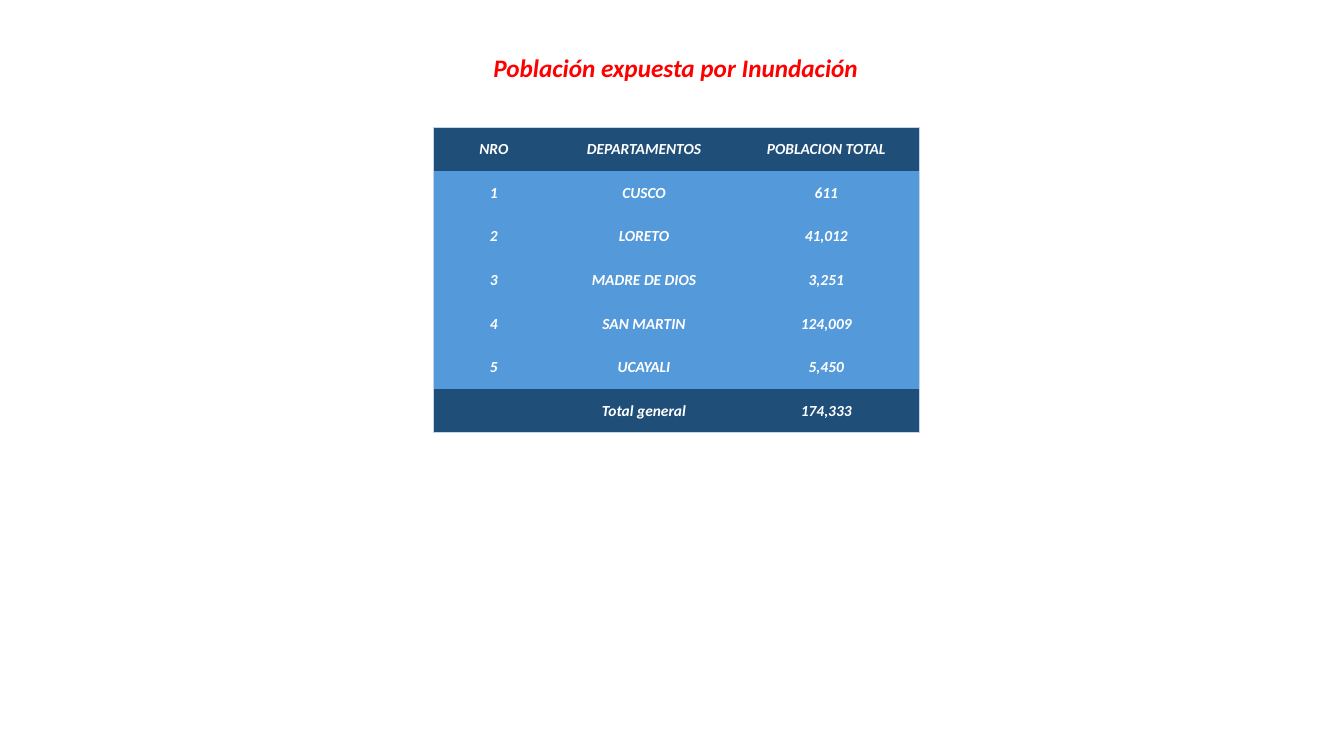
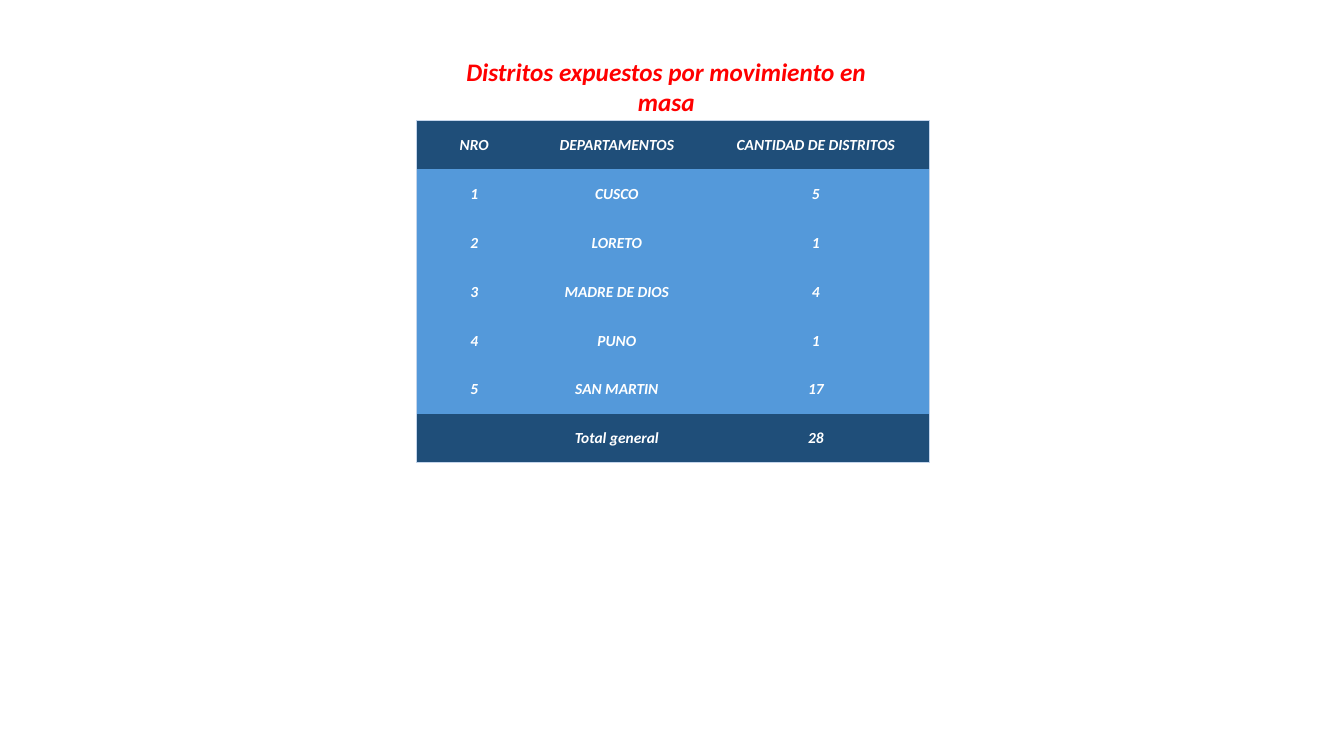
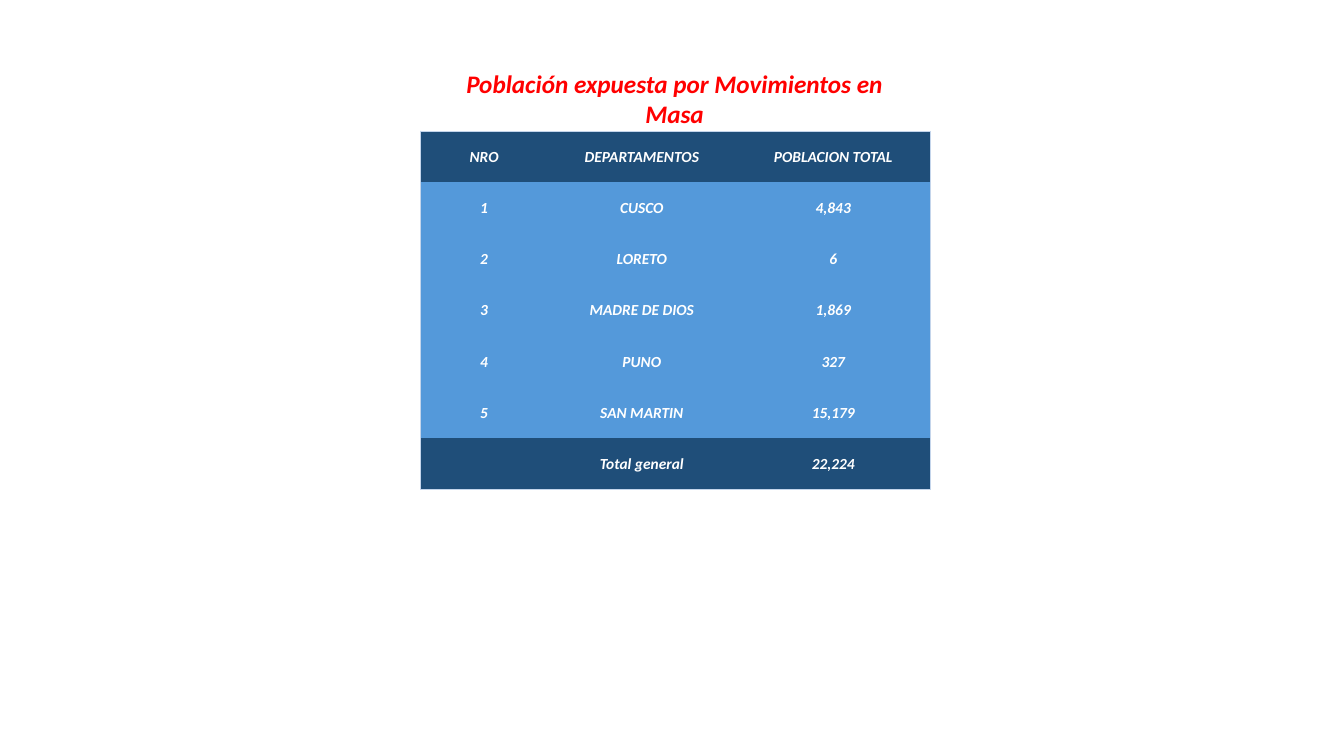
from pptx import Presentation
from pptx.dml.color import RGBColor
from pptx.enum.text import MSO_ANCHOR, MSO_AUTO_SIZE, PP_ALIGN
from pptx.oxml.ns import qn
from pptx.util import Cm, Pt
from lxml import etree

CENTER = PP_ALIGN.CENTER
MIDDLE = MSO_ANCHOR.MIDDLE
FIT_SHAPE = MSO_AUTO_SIZE.SHAPE_TO_FIT_TEXT

COLORS = {
    "title": "FF0000",
    "band": "1F4E79",
    "body": "5499DA",
    "text": "FFFFFF",
    "border": "C4D5EB",
}
FONT = "Calibri"
TITLE_SIZE = 18
CELL_SIZE = 11
TITLE_HEIGHT = 1.02
BORDER_WIDTH = 0.5
CELL_INSET = 0.02

SLIDES = [
    {
        "title": "Población expuesta por Inundación",
        "title_box": (12.14, 1.19, 9.78),
        "table_at": (10.92, 3.2),
        "columns": (3.05, 4.52, 4.67),
        "row_height": 1.1,
        "measure": "POBLACION TOTAL",
        "values": [("CUSCO", 611), ("LORETO", 41012), ("MADRE DE DIOS", 3251),
                   ("SAN MARTIN", 124009), ("UCAYALI", 5450)],
    },
    {
        "title": "Distritos expuestos por movimiento en masa",
        "title_box": (10.72, 1.3, 12.14),
        "table_at": (10.5, 3.04),
        "columns": (2.9, 4.29, 5.74),
        "row_height": 1.23,
        "measure": "CANTIDAD DE DISTRITOS",
        "values": [("CUSCO", 5), ("LORETO", 1), ("MADRE DE DIOS", 4),
                   ("PUNO", 1), ("SAN MARTIN", 17)],
    },
    {
        "title": "Población expuesta por Movimientos en Masa",
        "title_box": (10.74, 1.6, 12.52),
        "table_at": (10.6, 3.3),
        "columns": (3.2, 4.75, 4.9),
        "row_height": 1.29,
        "measure": "POBLACION TOTAL",
        "values": [("CUSCO", 4843), ("LORETO", 6), ("MADRE DE DIOS", 1869),
                   ("PUNO", 327), ("SAN MARTIN", 15179)],
    },
]


def add_text(paragraph, text, size, color):
    paragraph.alignment = CENTER
    run = paragraph.add_run()
    run.text = text
    run.font.name = FONT
    run.font.size = Pt(size)
    run.font.bold = True
    run.font.italic = True
    run.font.color.rgb = RGBColor.from_string(COLORS[color])


def add_title(slide, text, box):
    left, top, width = box
    shape = slide.shapes.add_textbox(Cm(left), Cm(top), Cm(width), Cm(TITLE_HEIGHT))
    frame = shape.text_frame
    frame.word_wrap = False
    frame.auto_size = FIT_SHAPE
    add_text(frame.paragraphs[0], text, TITLE_SIZE, "title")


def set_borders(cell, outer_edges):
    properties = cell._tc.get_or_add_tcPr()
    for index, (edge, visible) in enumerate(outer_edges.items()):
        line = etree.Element(qn(f"a:ln{edge}"), w=str(Pt(BORDER_WIDTH)))
        if visible:
            fill = etree.SubElement(line, qn("a:solidFill"))
            etree.SubElement(fill, qn("a:srgbClr"), val=COLORS["border"])
        else:
            etree.SubElement(line, qn("a:noFill"))
        properties.insert(index, line)


def style_cell(cell, text, color):
    cell.vertical_anchor = MIDDLE
    cell.margin_left = cell.margin_right = cell.margin_top = Cm(CELL_INSET)
    cell.margin_bottom = 0
    cell.fill.solid()
    cell.fill.fore_color.rgb = RGBColor.from_string(COLORS[color])
    if text:
        add_text(cell.text_frame.paragraphs[0], text, CELL_SIZE, "text")


def table_rows(measure, values):
    body = [(str(number), name, f"{value:,}")
            for number, (name, value) in enumerate(values, 1)]
    total = sum(value for _, value in values)
    return [("NRO", "DEPARTAMENTOS", measure), *body, ("", "Total general", f"{total:,}")]


def add_data_table(slide, content):
    rows = table_rows(content["measure"], content["values"])
    columns = content["columns"]
    row_height = content["row_height"]
    left, top = content["table_at"]
    table = slide.shapes.add_table(
        len(rows), len(columns), Cm(left), Cm(top),
        Cm(sum(columns)), Cm(row_height * len(rows))).table
    for column, width in zip(table.columns, columns):
        column.width = Cm(width)
    last_row, last_column = len(rows) - 1, len(columns) - 1
    for r, row in enumerate(rows):
        table.rows[r].height = Cm(row_height)
        color = "band" if r in (0, last_row) else "body"
        for c, text in enumerate(row):
            cell = table.cell(r, c)
            style_cell(cell, text, color)
            set_borders(cell, {"L": c == 0, "R": c == last_column,
                               "T": r == 0, "B": r == last_row})


def main():
    presentation = Presentation()
    presentation.slide_width = Cm(33.87)
    presentation.slide_height = Cm(19.05)
    for content in SLIDES:
        slide = presentation.slides.add_slide(presentation.slide_layouts[6])
        add_title(slide, content["title"], content["title_box"])
        add_data_table(slide, content)
    presentation.save("out.pptx")


if __name__ == "__main__":
    main()
